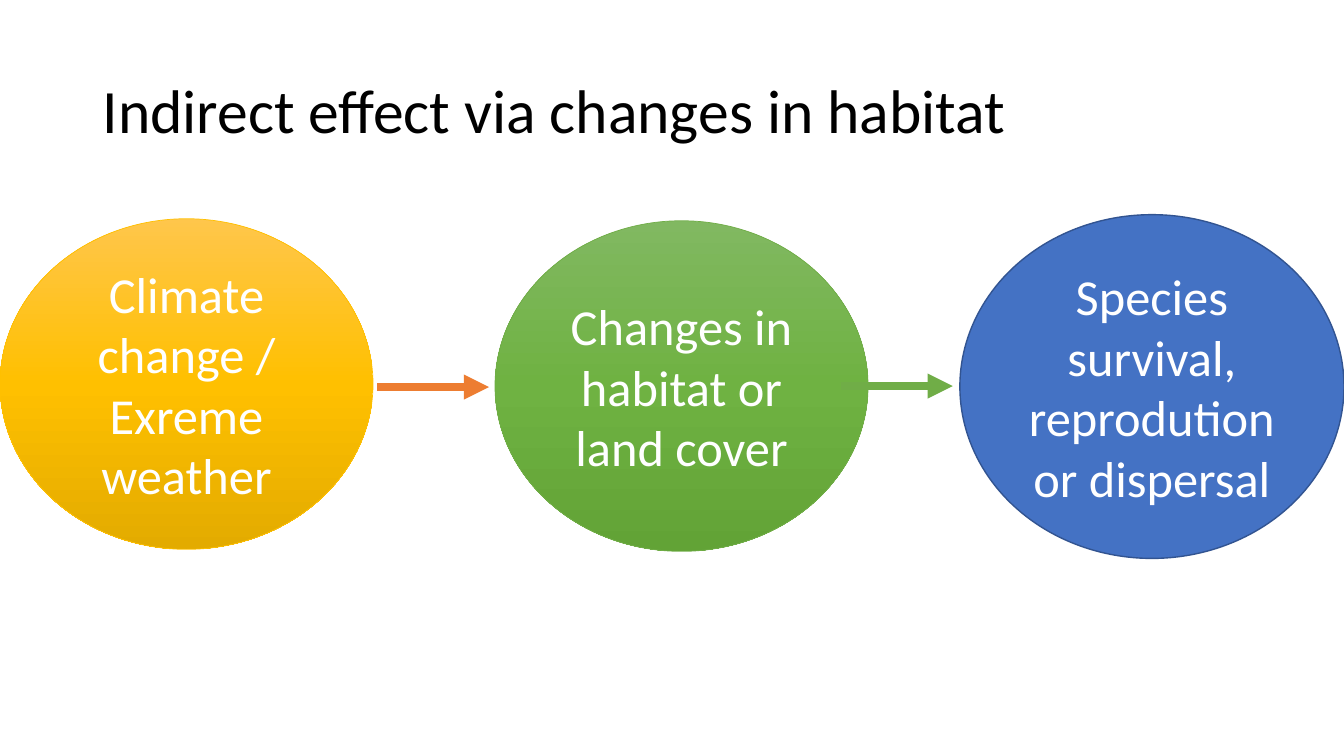
from dataclasses import dataclass

from lxml import etree
from pptx import Presentation
from pptx.dml.color import RGBColor
from pptx.enum.shapes import MSO_CONNECTOR, MSO_SHAPE
from pptx.enum.text import MSO_ANCHOR, PP_ALIGN
from pptx.oxml.ns import qn
from pptx.util import Inches, Pt

OVAL = MSO_SHAPE.OVAL
STRAIGHT = MSO_CONNECTOR.STRAIGHT
MIDDLE = MSO_ANCHOR.MIDDLE
CENTER = PP_ALIGN.CENTER
LEFT = PP_ALIGN.LEFT


@dataclass(frozen=True)
class Theme:
    font: str = "Calibri"
    title_size: int = 44
    label_size: int = 36
    arrow_width: int = 6
    black: str = "000000"
    white: str = "FFFFFF"
    orange: str = "ED7D31"
    green: str = "70AD47"
    gold: str = "FFC000"
    blue: str = "4472C4"
    dark_blue: str = "325491"
    gold_gradient: tuple = ("FFC64B", "FFC000", "E3AB00")
    green_gradient: tuple = ("81B861", "6FB242", "62A336")


THEME = Theme()


def write_text(shape, text, size, color, alignment):
    frame = shape.text_frame
    frame.word_wrap = True
    frame.vertical_anchor = MIDDLE
    frame.text = text
    paragraph = frame.paragraphs[0]
    paragraph.alignment = alignment
    font = paragraph.runs[0].font
    font.name = THEME.font
    font.size = Pt(size)
    font.color.rgb = RGBColor.from_string(color)
    return paragraph


def fill_shape(shape, colors):
    """Fill with one colour, or with evenly spaced stops from top to bottom."""
    if len(colors) == 1:
        shape.fill.solid()
        shape.fill.fore_color.rgb = RGBColor.from_string(colors[0])
        return
    shape.fill.gradient()
    shape.fill.gradient_angle = 270
    stops = next(shape.element.iter(qn("a:gsLst")))
    for stop in list(stops):
        stops.remove(stop)
    for index, color in enumerate(colors):
        position = 100000 * index // (len(colors) - 1)
        stop = etree.SubElement(stops, qn("a:gs"), pos=str(position))
        etree.SubElement(stop, qn("a:srgbClr"), val=color)


def add_title(page, text):
    box = page.shapes.add_textbox(Inches(0.92), Inches(0.4), Inches(11.5), Inches(1.45))
    paragraph = write_text(box, text, THEME.title_size, THEME.black, LEFT)
    paragraph.line_spacing = 0.9


def add_stage(page, text, left, top, width, height, colors, line_color, line_width):
    stage = page.shapes.add_shape(
        OVAL, Inches(left), Inches(top), Inches(width), Inches(height))
    stage.shadow.inherit = False
    fill_shape(stage, colors)
    stage.line.color.rgb = RGBColor.from_string(line_color)
    stage.line.width = Pt(line_width)
    write_text(stage, text, THEME.label_size, THEME.white, CENTER)


def add_arrow(page, left, middle, color, length=1.11):
    arrow = page.shapes.add_connector(
        STRAIGHT, Inches(left), Inches(middle), Inches(left + length), Inches(middle))
    arrow.line.color.rgb = RGBColor.from_string(color)
    arrow.line.width = Pt(THEME.arrow_width)
    etree.SubElement(arrow.line._get_or_add_ln(), qn("a:tailEnd"), type="triangle")
    etree.SubElement(arrow.element.spPr, qn("a:effectLst"))


def main():
    deck = Presentation()
    deck.slide_width = Inches(13.33)
    deck.slide_height = Inches(7.5)
    page = deck.slides.add_slide(deck.slide_layouts[6])

    add_title(page, "Indirect effect via changes in habitat")

    # Cause and final effect
    add_stage(page, "Climate change / Exreme weather", 0, 2.17, 3.7, 3.28,
              THEME.gold_gradient, THEME.gold, 0.5)
    add_stage(page, "Species survival, reprodution or dispersal", 9.52, 2.13, 3.81, 3.41,
              (THEME.blue,), THEME.dark_blue, 1)

    # Habitat step between them, with the arrows in and out
    add_arrow(page, 3.74, 3.84, THEME.orange)
    add_stage(page, "Changes in habitat or land cover", 4.91, 2.19, 3.7, 3.28,
              THEME.green_gradient, THEME.green, 0.5)
    add_arrow(page, 8.34, 3.83, THEME.green)

    deck.save("out.pptx")


if __name__ == "__main__":
    main()
